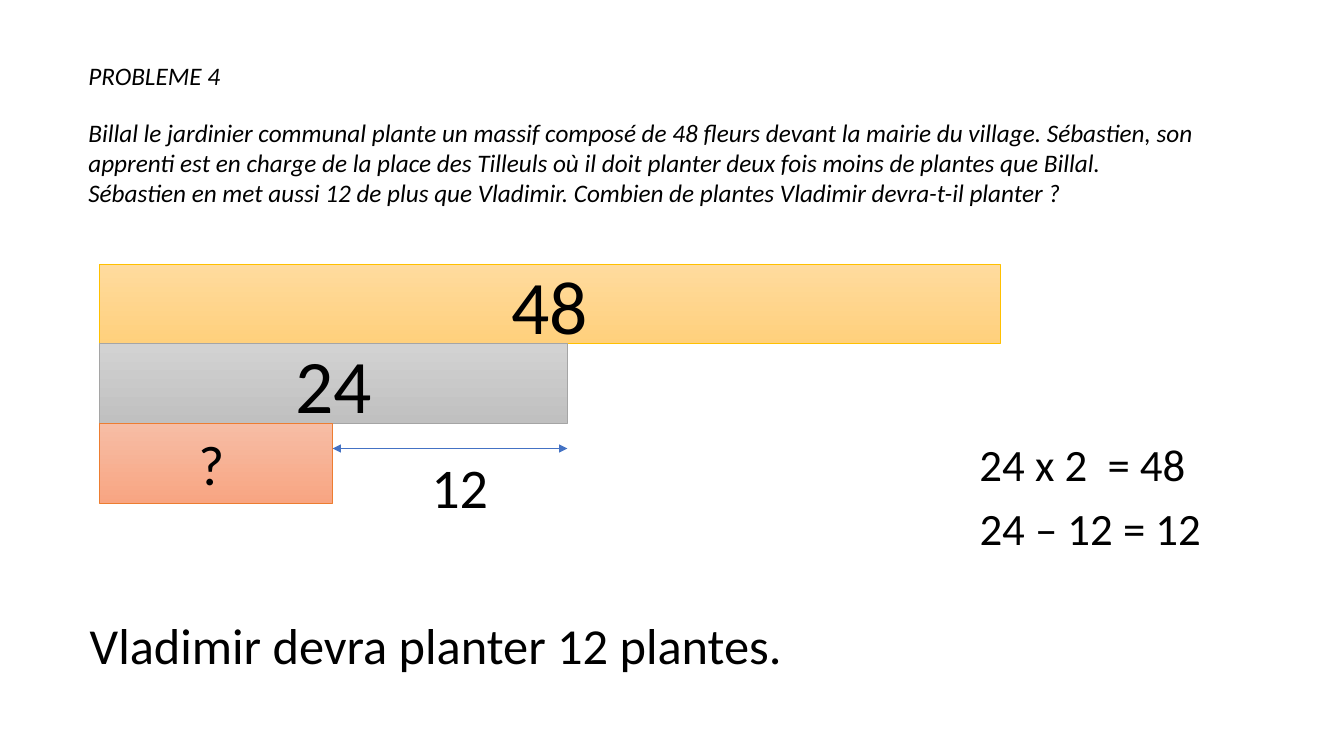
from lxml import etree
from pptx import Presentation
from pptx.dml.color import RGBColor as RGB
from pptx.enum.shapes import MSO_CONNECTOR as CONN, MSO_SHAPE as SHAPE
from pptx.enum.text import MSO_ANCHOR as ANCHOR, MSO_AUTO_SIZE as AUTO, PP_ALIGN as ALIGN
from pptx.oxml.ns import qn
from pptx.util import Pt

FONT = "Calibri"
BLACK = RGB(0x00, 0x00, 0x00)
BLUE = RGB(0x44, 0x72, 0xC4)
GOLD = (RGB(0xFF, 0xDB, 0x9E), RGB(0xFF, 0xD0, 0x7C), RGB(0xFF, 0xC0, 0x00))
GREY = (RGB(0xD2, 0xD2, 0xD2), RGB(0xC0, 0xC0, 0xC0), RGB(0xA5, 0xA5, 0xA5))
ORANGE = (RGB(0xF7, 0xBD, 0xA5), RGB(0xF8, 0xA5, 0x82), RGB(0xED, 0x7D, 0x31))

BAR_LEFT, BAR_TOP, BAR_HEIGHT = 71.3, 188.6, 57
BARS = [("48", 643, GOLD), ("24", 334, GREY), ("", 166.3, ORANGE)]
STATEMENT = [
    ["PROBLEME 4"],
    ["Billal le jardinier communal plante un massif composé de 48 fleurs devant la mairie "
     "du village. Sébastien, son apprenti est en charge de la place des Tilleuls où il doit "
     "planter deux fois moins de plantes que Billal.",
     "Sébastien en met aussi 12 de plus que Vladimir. "
     "Combien de plantes Vladimir devra-t-il planter ?"],
]


def add_run(p, text, size, italic=False):
    r = p.add_run()
    r.text = text
    r.font.name = FONT
    r.font.size = Pt(size)
    r.font.italic = italic
    r.font.color.rgb = BLACK


def add_box(slide, left, top, width, height):
    tf = slide.shapes.add_textbox(Pt(left), Pt(top), Pt(width), Pt(height)).text_frame
    tf.word_wrap = True
    tf.auto_size = AUTO.SHAPE_TO_FIT_TEXT
    return tf


def add_label(slide, text, size, left, top, width, height):
    tf = add_box(slide, left, top, width, height)
    add_run(tf.paragraphs[0], text, size)


def add_statement(slide, left, top, width, height):
    tf = add_box(slide, left, top, width, height)
    for i, lines in enumerate(STATEMENT):
        p = tf.add_paragraph() if i else tf.paragraphs[0]
        p.space_before, p.space_after = Pt(5), Pt(14)
        for j, line in enumerate(lines):
            if j:
                p.add_line_break()
            add_run(p, line, 18, italic=True)


def add_bar(slide, row, text, width, colours):
    top = BAR_TOP + row * BAR_HEIGHT
    sp = slide.shapes.add_shape(SHAPE.RECTANGLE, Pt(BAR_LEFT), Pt(top), Pt(width), Pt(BAR_HEIGHT))
    sp.shadow.inherit = False
    sp.fill.gradient()
    sp.fill.gradient_angle = 270
    for stop, position, colour in zip(sp.fill.gradient_stops, (0, 1), colours):
        stop.position = position
        stop.color.rgb = colour
    sp.line.color.rgb = colours[2]
    sp.line.width = Pt(0.5)
    if text:
        tf = sp.text_frame
        tf.vertical_anchor = ANCHOR.MIDDLE
        p = tf.paragraphs[0]
        p.alignment = ALIGN.CENTER
        add_run(p, text, 54)


def add_double_arrow(slide, start, end, y):
    cxn = slide.shapes.add_connector(CONN.STRAIGHT, Pt(start), Pt(y), Pt(end), Pt(y))
    cxn.line.color.rgb = BLUE
    cxn.line.width = Pt(0.5)
    ln = cxn.line._get_or_add_ln()
    for tag in ("a:headEnd", "a:tailEnd"):
        etree.SubElement(ln, qn(tag), type="triangle")
    etree.SubElement(cxn._element.spPr, qn("a:effectLst"))


def main():
    prs = Presentation()
    prs.slide_width, prs.slide_height = Pt(960), Pt(540)
    slide = prs.slides.add_slide(prs.slide_layouts[6])

    add_statement(slide, 56, 39.6, 852, 114)
    add_label(slide, "24 x 2  = 48", 32, 692.6, 308.2, 194, 46)
    add_label(slide, "24 – 12 = 12", 32, 692.6, 354.2, 229, 46)
    add_label(slide, "Vladimir devra planter 12 plantes.", 36, 57, 435, 742, 51)

    for row, (text, width, colours) in enumerate(BARS):
        add_bar(slide, row, text, width, colours)
    add_double_arrow(slide, BAR_LEFT + BARS[2][1], BAR_LEFT + BARS[1][1], 320.4)
    add_label(slide, "12", 40, 301, 319.7, 72, 55.4)
    add_label(slide, "?", 40, 134.6, 303.1, 72, 55.4)

    prs.save("out.pptx")


if __name__ == "__main__":
    main()
